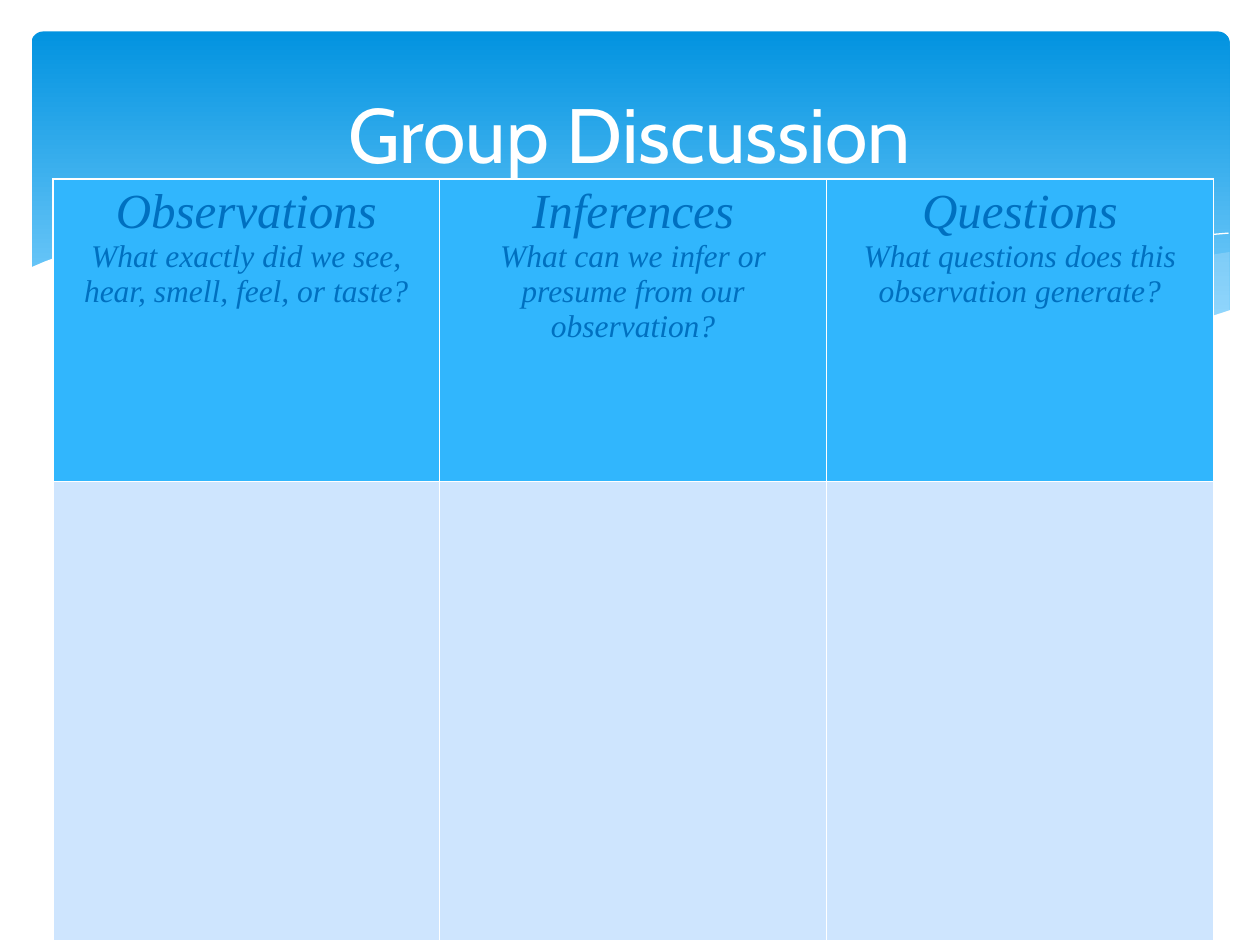
from lxml import etree
from pptx import Presentation
from pptx.dml.color import RGBColor
from pptx.enum.shapes import MSO_SHAPE
from pptx.enum.text import MSO_ANCHOR, PP_ALIGN
from pptx.oxml.ns import qn
from pptx.util import Inches, Pt

WHITE = "FFFFFF"
WAVE_BLUE = "C6E7FC"
HEADER_BLUE = "31B6FD"
BODY_BLUE = "CEE5FE"
TEXT_BLUE = "0070C0"
CURVE_STEPS = 20


def color(hex_string):
    return RGBColor.from_string(hex_string)


def curve_points(start, control_1, control_2, end):
    """Sample a cubic Bézier curve, leaving out its start point."""
    points = []
    for step in range(1, CURVE_STEPS + 1):
        t = step / CURVE_STEPS
        weights = ((1 - t) ** 3, 3 * t * (1 - t) ** 2, 3 * t**2 * (1 - t), t**3)
        points.append(tuple(
            Inches(sum(weight * value for weight, value in zip(weights, values)))
            for values in zip(start, control_1, control_2, end)
        ))
    return points


presentation = Presentation()
presentation.slide_width = Inches(10)
presentation.slide_height = Inches(7.5)
slide = presentation.slides.add_slide(presentation.slide_layouts[5])
shapes = slide.shapes

# Gradient banner
banner = shapes.add_shape(
    MSO_SHAPE.ROUNDED_RECTANGLE, Inches(0.25), Inches(0.25), Inches(9.51), Inches(2.7)
)
banner.adjustments[0] = 0.034
banner.shadow.inherit = False
banner.line.fill.background()
banner.fill.gradient()
banner.fill.gradient_angle = 270
for stop, (position, stop_color) in zip(
    banner.fill.gradient_stops, [(0, "0293E0"), (0.9, "83D3FE")]
):
    stop.position = position
    stop.color.rgb = color(stop_color)

# Waves, back to front. Each curve is (control, control, end) and goes on
# from the point before it; corners are joined by straight lines.
right_wave = {
    "fill": WAVE_BLUE, "opacity": 29, "start": (9.76, 2),
    "curves": [
        ((8.9, 2.13), (7.9, 2.42), (6.61, 2.65)),
        ((7.7, 2.81), (8.9, 2.87), (9.76, 2.47)),
    ],
}
middle_wave = {
    "fill": WAVE_BLUE, "opacity": 40, "start": (8.93, 2.73),
    "curves": [
        ((8.2, 2.64), (7.2, 2.44), (6.29, 2.22)),
        ((4.6, 1.81), (3.6, 1.8), (2.86, 1.91)),
        ((4.9, 2.2), (6.9, 3.03), (8.93, 2.73)),
    ],
}
falling_line = {
    "start": (3.09, 1.95),
    "curves": [((4.6, 1.67), (6.9, 2.08), (9.07, 2.72))],
}
rising_line = {
    "start": (6.13, 2.57),
    "curves": [((7.3, 2.25), (8.7, 1.93), (9.75, 1.85))],
}
white_wave = {
    "fill": WHITE, "start": (9.77, 2.46),
    "curves": [
        ((8.3, 2.98), (6.6, 2.72), (4.47, 2.2)),
        ((2.4, 1.73), (1.1, 1.73), (0.23, 2.13)),
    ],
    "corners": [(0.23, 3.29), (9.77, 3.29)],
}
for wave in (right_wave, middle_wave, falling_line, rising_line, white_wave):
    filled = "fill" in wave
    point = wave["start"]
    builder = shapes.build_freeform(Inches(point[0]), Inches(point[1]))
    outline = []
    for curve in wave["curves"]:
        outline += curve_points(point, *curve)
        point = curve[-1]
    outline += [(Inches(x), Inches(y)) for x, y in wave.get("corners", [])]
    builder.add_line_segments(outline, close=filled)
    shape = builder.convert_to_shape()
    shape.shadow.inherit = False
    if filled:
        shape.line.fill.background()
        shape.fill.solid()
        shape.fill.fore_color.rgb = color(wave["fill"])
    else:
        shape.fill.background()
        shape.line.color.rgb = color(WHITE)
        shape.line.width = Pt(0)
    if "opacity" in wave:
        fill_element = shape._element.spPr.find(qn("a:solidFill"))
        etree.SubElement(fill_element[0], qn("a:alpha"), val=str(wave["opacity"] * 1000))

# Title, brought in front of the banner and waves
title = shapes.title
shapes._spTree.append(title._element)
title.left, title.top = Inches(0.5), Inches(0.37)
title.width, title.height = Inches(9), Inches(1.37)
title.text_frame.text = "Group Discussion"
title.text_frame.vertical_anchor = MSO_ANCHOR.MIDDLE

# Discussion table
columns = {
    "Observations": "What exactly did we see, hear, smell, feel, or taste?",
    "Inferences": "What can we infer or presume from our observation?",
    "Questions": "What questions does this observation generate?",
}
row_styles = [(2.4, HEADER_BLUE), (3.65, BODY_BLUE)]
table = shapes.add_table(
    len(row_styles), len(columns), Inches(0.42), Inches(1.42), Inches(9.21), Inches(6.05)
).table
table.first_row = False
table.horz_banding = False
for row, (height, fill_color) in zip(table.rows, row_styles):
    row.height = Inches(height)
    for cell in row.cells:
        properties = cell._tc.get_or_add_tcPr()
        for side in ("L", "R", "T", "B"):
            border = etree.SubElement(properties, qn(f"a:ln{side}"), w=str(Pt(1)))
            border_fill = etree.SubElement(border, qn("a:solidFill"))
            etree.SubElement(border_fill, qn("a:srgbClr"), val=WHITE)
        cell.fill.solid()
        cell.fill.fore_color.rgb = color(fill_color)

# Text formats
title_format = {"name": "Cabin", "size": Pt(44)}
heading_format = {"name": "Times New Roman", "size": Pt(28), "italic": True}
prompt_format = {**heading_format, "size": Pt(18)}
formatted = [(title.text_frame.paragraphs[0], title_format, WHITE)]
for cell, (heading, prompt) in zip(table.rows[0].cells, columns.items()):
    cell.text = f"{heading}\n{prompt}"
    heading_paragraph, prompt_paragraph = cell.text_frame.paragraphs
    formatted.append((heading_paragraph, heading_format, TEXT_BLUE))
    formatted.append((prompt_paragraph, prompt_format, TEXT_BLUE))

for paragraph, font_format, font_color in formatted:
    paragraph.alignment = PP_ALIGN.CENTER
    paragraph.font.color.rgb = color(font_color)
    for name, value in font_format.items():
        setattr(paragraph.font, name, value)

presentation.save("out.pptx")
